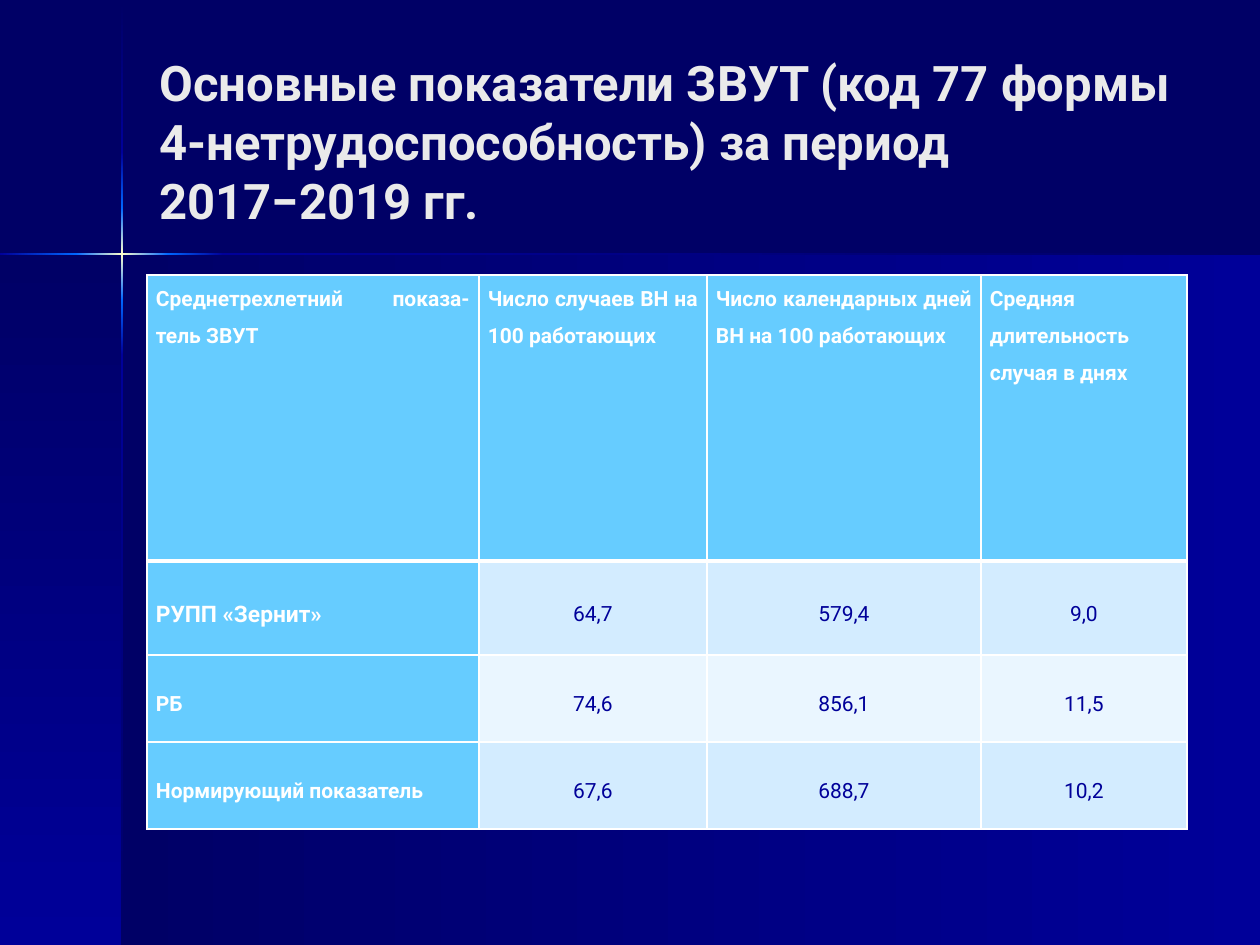
from copy import deepcopy
from itertools import accumulate

from pptx import Presentation
from pptx import util as u
from pptx.dml import color
from pptx.enum import shapes, text
from pptx.oxml import parse_xml
from pptx.oxml.ns import nsdecls

HEX = {
    "night": "000066", "blue": "000099", "azure": "0066FF", "cream": "FFFFCC",
    "pale": "EAEAEA", "white": "FFFFFF", "sky": "66CCFF",
    "ice": "D3ECFF", "frost": "EAF6FF",
}
ALIGN = text.PP_ALIGN
ANCHOR = text.MSO_ANCHOR
UNIT = u.Inches(1) / 126


def px(n):
    return u.Emu(round(n * UNIT))


def rgb(name):
    return color.RGBColor.from_string(HEX[name])


def put(item, **vals):
    for key, val in vals.items():
        setattr(item, key, val)


class Deck:
    font = "Roboto"

    def __init__(self, wide, high):
        self.prs = Presentation()
        put(self.prs, slide_width=px(wide), slide_height=px(high))
        self.slide = self.prs.slides.add_slide(self.prs.slide_layouts[5])
        fill = self.slide.background.fill
        fill.solid()
        fill.fore_color.rgb = rgb("night")

    def label(self, para, words, size, tint, bold, **form):
        put(para, **form)
        run = para.add_run()
        run.text = words
        put(run.font, name=self.font, size=u.Pt(size), bold=bold)
        run.font.color.rgb = rgb(tint)

    def title(self, words, box):
        head = self.slide.shapes.title
        put(head, **dict(zip(("left", "top", "width", "height"), map(px, box))))
        frame = head.text_frame
        put(frame, word_wrap=True, auto_size=text.MSO_AUTO_SIZE.NONE,
            vertical_anchor=ANCHOR.MIDDLE)
        self.label(frame.paragraphs[0], words, 28, "pale", True, alignment=ALIGN.LEFT)

    def band(self, box, tints, down):
        kind = shapes.MSO_SHAPE.RECTANGLE
        bar = self.slide.shapes.add_shape(kind, *map(px, box))
        bar.shadow.inherit = False
        bar.line.fill.background()
        bar.fill.gradient()
        bar.fill.gradient_angle = 270 if down else 0
        stops = bar._element.spPr.xpath("a:gradFill/a:gsLst")[0]
        for _ in tints[2:]:
            stops.append(deepcopy(stops[0]))
        for i, (stop, tint) in enumerate(zip(bar.fill.gradient_stops, tints)):
            stop.color.rgb = rgb(tint)
            stop.position = i / (len(tints) - 1)

    def beam(self, marks, fades, at, down):
        for start, end, tints in zip(marks, marks[1:], fades):
            box = (at, start, 2, end - start) if down else (start, at, end - start, 2)
            self.band(box, tints, down)

    def edge(self, cell, side, width):
        cell._tc.get_or_add_tcPr().append(parse_xml(
            f'<a:{side} {nsdecls("a")} w="{u.Pt(width)}"><a:solidFill>'
            f'<a:srgbClr val="{HEX["white"]}"/></a:solidFill></a:{side}>'))

    def cell(self, cell, words, row, col):
        head, side = row == 0, col == 0
        key = head or side
        put(cell, margin_left=px(9), margin_right=px(9), margin_top=0, margin_bottom=0,
            vertical_anchor=ANCHOR.TOP if head else ANCHOR.MIDDLE)
        for name in ("lnL", "lnR", "lnT", "lnB"):
            thick = (head and name == "lnB") or (row == 1 and name == "lnT")
            self.edge(cell, name, 3 if thick else 1)
        cell.fill.solid()
        cell.fill.fore_color.rgb = rgb("sky" if key else "ice" if row % 2 else "frost")
        if head:
            align = ALIGN.JUSTIFY if col < 3 else ALIGN.LEFT
        else:
            align = ALIGN.LEFT if side else ALIGN.CENTER
        size = 13 if side and row == 1 else 12
        self.label(cell.text_frame.paragraphs[0], words, size,
                   "white" if key else "blue", key, alignment=align, line_spacing=1.5)

    def table(self, left, top, cols, rows, data):
        box = map(px, (left, top, sum(cols), sum(rows)))
        grid = self.slide.shapes.add_table(len(rows), len(cols), *box).table
        for col, wide in zip(grid.columns, cols):
            col.width = px(wide)
        for row, high in zip(grid.rows, rows):
            row.height = px(high)
        for r, line in enumerate(data):
            for c, words in enumerate(line):
                self.cell(grid.cell(r, c), words, r, c)


def main():
    deck = Deck(1260, 945)
    base = ("night", "blue")
    deck.band((122, 255, 1138, 690), base, False)
    deck.band((0, 255, 122, 690), base, True)
    fades = [base, ("blue", "azure"), ("azure", "cream", "azure"),
             ("azure", "blue"), ("blue", "night")]
    deck.beam(list(accumulate((1, 151, 56, 92, 55, 590))), fades, 121, True)
    deck.beam(list(accumulate((0, 76, 92, 55, 1037))), fades[1:], 253, False)
    deck.title("Основные показатели ЗВУТ (код 77 формы 4-нетрудоспособность) "
               "за период 2017−2019 гг.", (147, 42, 1040, 198))
    deck.table(147, 275, (332, 228, 274, 206), (286, 94, 87, 87), [
        ("Среднетрехлетний показа-тель ЗВУТ", "Число случаев ВН на 100 работающих",
         "Число календарных дней ВН на 100 работающих",
         "Средняя длительность случая в днях"),
        ("РУПП «Зернит»", "64,7", "579,4", "9,0"),
        ("РБ", "74,6", "856,1", "11,5"),
        ("Нормирующий показатель", "67,6", "688,7", "10,2"),
    ])
    deck.prs.save("out.pptx")


if __name__ == "__main__":
    main()
